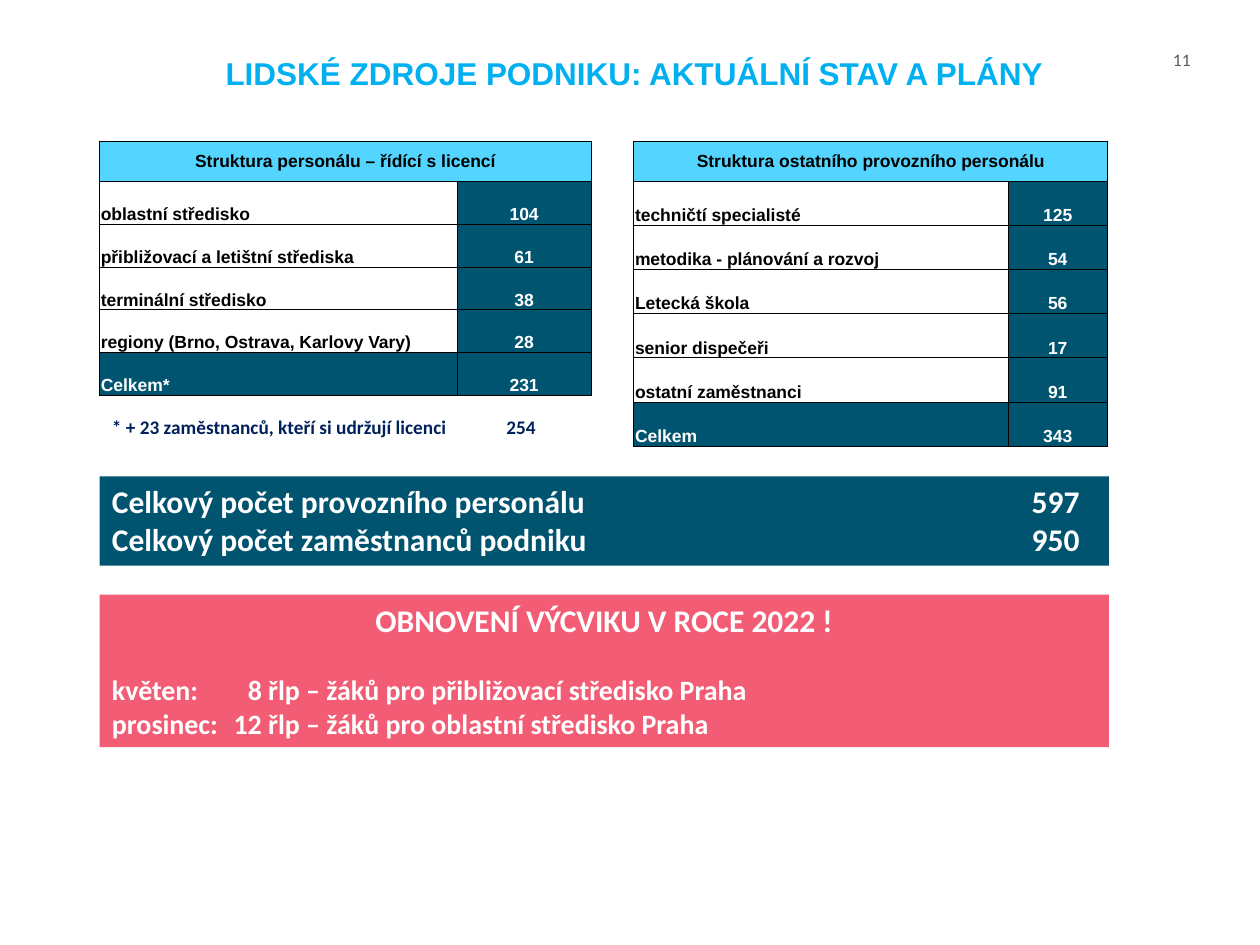
import pptx
import pptx.util
import pptx.dml.color
import pptx.enum.text
import pptx.enum.shapes
import pptx.oxml
import pptx.oxml.ns
from lxml import etree

Inches = pptx.util.Inches
Align = pptx.enum.text.PP_ALIGN
Anchor = pptx.enum.text.MSO_ANCHOR

HEX = {
    "title": "00B0F0", "head": "53D5FF", "teal": "005470", "rose": "F25C74",
    "navy": "00205B", "gray": "5A5A5A", "black": "000000", "white": "FFFFFF",
}


def color(name):
    return pptx.dml.color.RGBColor.from_string(HEX[name])


def child(parent, tag, **attrs):
    return etree.SubElement(parent, pptx.oxml.ns.qn(tag), attrs)


class Deck:
    """Holds the text style and the current slide."""

    sans, body = "Arial", "Calibri"

    def __init__(self):
        self.deck = pptx.Presentation()
        self.deck.slide_width = Inches(10)
        self.deck.slide_height = Inches(7.5)
        self.slide = self.deck.slides.add_slide(self.deck.slide_layouts[5])

    def words(self, para, text, size, ink, face=None, bold=True, tabs=(), **form):
        for key, value in form.items():
            setattr(para, key, value)
        if tabs:
            stops = child(para._p.get_or_add_pPr(), "a:tabLst")
            for pos, side in tabs:
                child(stops, "a:tab", pos=str(Inches(pos)), algn=side)
        run = para.add_run()
        run.text = text
        look = {"name": face or self.body, "size": pptx.util.Pt(size), "bold": bold}
        for key, value in look.items():
            setattr(run.font, key, value)
        run.font.color.rgb = color(ink)

    def title(self, text, left, top, width, height):
        shape = self.slide.shapes.title
        spot = {"left": left, "top": top, "width": width, "height": height}
        for key, value in spot.items():
            setattr(shape, key, Inches(value))
        frame = shape.text_frame
        frame.vertical_anchor = Anchor.TOP
        frame.auto_size = pptx.enum.text.MSO_AUTO_SIZE.NONE
        self.words(frame.paragraphs[0], text, 18, "title", self.sans,
                   alignment=Align.CENTER, line_spacing=0.9)

    def label(self, text, size, ink, box, inset=0.1, **form):
        shape = self.slide.shapes.add_textbox(*map(Inches, box))
        frame = shape.text_frame
        frame.word_wrap = True
        frame.margin_left = frame.margin_right = Inches(inset)
        self.words(frame.paragraphs[0], text, size, ink, **form)

    def panel(self, lines, fill, box):
        kind = pptx.enum.shapes.MSO_SHAPE.RECTANGLE
        shape = self.slide.shapes.add_shape(kind, *map(Inches, box))
        shape.shadow.inherit = False
        shape.fill.solid()
        shape.fill.fore_color.rgb = color(fill)
        shape.line.fill.background()
        frame = shape.text_frame
        frame.word_wrap = True
        frame.vertical_anchor = Anchor.TOP
        for i, (text, size, form) in enumerate(lines):
            para = frame.add_paragraph() if i else frame.paragraphs[0]
            self.words(para, text, size, "white", **{"alignment": Align.LEFT, **form})

    def cell(self, cell, text, ink, fill, align, anchor=Anchor.BOTTOM):
        form = {"margin_left": Inches(0.01), "margin_right": Inches(0.01),
                "margin_top": Inches(0.01), "margin_bottom": 0,
                "vertical_anchor": anchor}
        for key, value in form.items():
            setattr(cell, key, value)
        props = cell._tc.get_or_add_tcPr()
        for side in ("a:lnL", "a:lnR", "a:lnT", "a:lnB"):
            line = child(props, side, w=str(pptx.util.Pt(0.5)))
            child(child(line, "a:solidFill"), "a:srgbClr", val=HEX["black"])
        if fill:
            cell.fill.solid()
            cell.fill.fore_color.rgb = color(fill)
        else:
            cell.fill.background()
        self.words(cell.text_frame.paragraphs[0], text, 10, ink, self.sans,
                   alignment=align)

    def table(self, head, rows, left, top, cols, heights):
        shape = self.slide.shapes.add_table(
            len(rows) + 1, 2, Inches(left), Inches(top),
            Inches(sum(cols)), Inches(sum(heights)))
        table = shape.table
        table.first_row = table.horz_banding = False
        for col, width in zip(table.columns, cols):
            col.width = Inches(width)
        for row, height in zip(table.rows, heights):
            row.height = Inches(height)
        table.cell(0, 0).merge(table.cell(0, 1))
        for i in range(2):
            self.cell(table.cell(0, i), "" if i else head, "black", "head",
                      Align.CENTER, Anchor.MIDDLE)
        for i, (name, count) in enumerate(rows, 1):
            ink, fill = ("white", "teal") if i == len(rows) else ("black", None)
            self.cell(table.cell(i, 0), name, ink, fill, Align.LEFT)
            self.cell(table.cell(i, 1), str(count), "white", "teal", Align.CENTER)


def main():
    deck = Deck()
    left, wide = 0.79, 8.01

    # Title and page number
    deck.label("11", 10, "gray", (9.31, 0.34, 0.64, 0.27), inset=0, bold=False)
    deck.title("LIDSKÉ ZDROJE PODNIKU: AKTUÁLNÍ STAV A PLÁNY", 0.64, 0.41, 8.79, 0.62)

    # Staff tables
    deck.table("Struktura personálu – řídící s licencí", [
        ("oblastní středisko", 104),
        ("přibližovací a letištní střediska", 61),
        ("terminální středisko", 38),
        ("regiony (Brno, Ostrava, Karlovy Vary)", 28),
        ("Celkem*", 231),
    ], left, 1.12, (2.84, 1.06), [0.32] + [0.34] * 5)
    deck.table("Struktura ostatního provozního personálu", [
        ("techničtí specialisté", 125),
        ("metodika - plánování a rozvoj", 54),
        ("Letecká škola", 56),
        ("senior dispečeři", 17),
        ("ostatní zaměstnanci", 91),
        ("Celkem", 343),
    ], 5.03, 1.12, (2.97, 0.79), [0.32] + [0.35] * 6)
    deck.label("* + 23 zaměstnanců, kteří si udržují licenci\t254", 11, "navy",
               (left, 3.25, 3.96, 0.29), tabs=[(3.13, "l")])

    # Totals
    total = {"tabs": [(7.68, "r")]}
    deck.panel([
        ("Celkový počet provozního personálu\t597", 18, total),
        ("Celkový počet zaměstnanců podniku\t950", 18, total),
    ], "teal", (left, 3.78, wide, 0.71))

    # Training plan
    plan = {"tabs": [(1.19, "r"), (1.24, "l")]}
    deck.panel([
        ("OBNOVENÍ VÝCVIKU V ROCE 2022 !", 18, {"alignment": Align.CENTER}),
        ("květen:\t8\třlp – žáků pro přibližovací středisko Praha", 16,
         {**plan, "space_before": pptx.util.Pt(19.5)}),
        ("prosinec:\t12\třlp – žáků pro oblastní středisko Praha", 16, plan),
    ], "rose", (left, 4.72, wide, 1.21))

    deck.deck.save("out.pptx")


if __name__ == "__main__":
    main()
